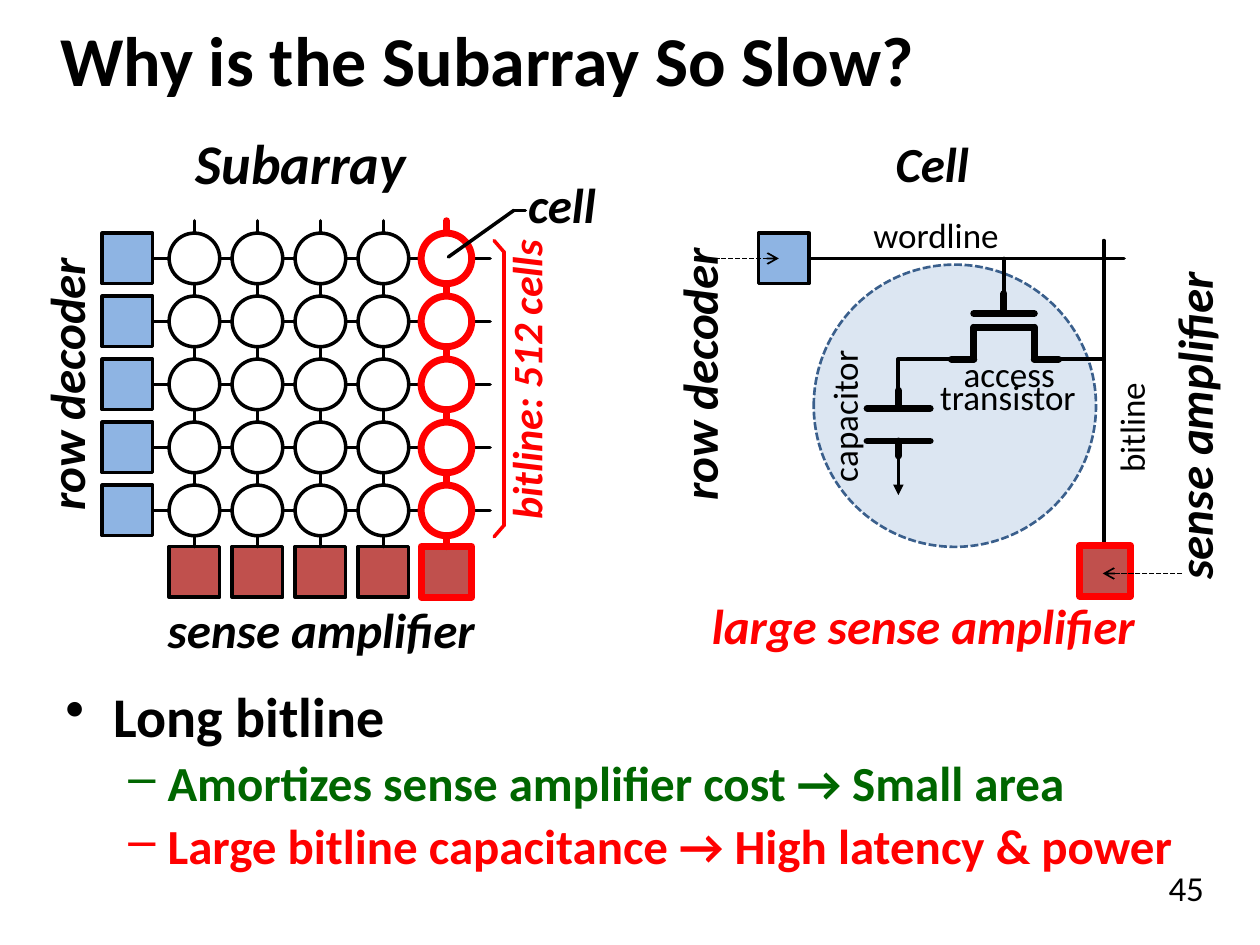
from lxml import etree
from pptx import Presentation
from pptx import util as u
from pptx.dml import color
from pptx.enum import dml, shapes, text
from pptx.oxml import ns

BLACK, WHITE, RED, GREEN = "000000", "FFFFFF", "FF0000", "006600"
BLUE, BRICK, PALE, NAVY = "8EB4E3", "C0504D", "DCE6F2", "3A5F8C"
RECT, OVAL = shapes.MSO_SHAPE.RECTANGLE, shapes.MSO_SHAPE.OVAL
SIDE, PITCH, COUNT = 1.02, 1.27, 5
FIRST_COLUMN, FIRST_ROW = 3.92, 5.21
THIN, THICK = 2, 4


def rgb(value):
    return color.RGBColor.from_string(value)


class Sketch:
    """Draws styled elements, measured in centimetres, on one slide."""

    font = "Calibri"

    def __init__(self, slide):
        self.slide = slide

    def style(self, paragraph, size, tint=BLACK, bold=False, italic=False):
        for run in paragraph.runs:
            font = run.font
            font.name, font.size = self.font, u.Pt(size)
            font.bold, font.italic = bold, italic
            font.color.rgb = rgb(tint)

    def stroke(self, line, tint, width, dashed=False):
        line.color.rgb = rgb(tint)
        line.width = u.Pt(width)
        if dashed:
            line.dash_style = dml.MSO_LINE.SQUARE_DOT

    def title(self, words):
        heading = self.slide.shapes.title
        heading.left, heading.top = u.Cm(0), u.Cm(0)
        heading.width, heading.height = u.Cm(25.4), u.Cm(2.34)
        frame = heading.text_frame
        frame.text = words
        frame.margin_left = u.Cm(1.22)
        frame.vertical_anchor = text.MSO_ANCHOR.MIDDLE
        frame.paragraphs[0].alignment = text.PP_ALIGN.LEFT
        self.style(frame.paragraphs[0], 40, bold=True)

    def frame(self, box, turned=False):
        holder = self.slide.shapes.add_textbox(*map(u.Cm, box))
        holder.rotation = 270 if turned else 0
        holder.text_frame.word_wrap = True
        return holder.text_frame

    def label(self, words, box, size=20, tint=BLACK, strong=False, turned=False,
              align=text.PP_ALIGN.CENTER, anchor=text.MSO_ANCHOR.MIDDLE):
        frame = self.frame(box, turned)
        frame.text = words
        frame.vertical_anchor = anchor
        frame.paragraphs[0].alignment = align
        self.style(frame.paragraphs[0], size, tint, strong, strong)

    def bullets(self, items, box):
        frame = self.frame(box)
        for index, (words, level, size, tint) in enumerate(items):
            paragraph = frame.add_paragraph() if index else frame.paragraphs[0]
            paragraph.text = words
            paragraph.level = level
            paragraph.line_spacing = 0.9
            paragraph.space_before = u.Pt(size * 0.2)
            mark, margin, hang = (("•", 0.97, 0.97), ("–", 2.06, 0.79))[level]
            properties = paragraph._p.get_or_add_pPr()
            properties.set("marL", str(u.Cm(margin)))
            properties.set("indent", str(-u.Cm(hang)))
            etree.SubElement(properties, ns.qn("a:buChar")).set("char", mark)
            self.style(paragraph, size, tint, bold=True)

    def block(self, kind, x, y, fill, tint=BLACK, width=THIN, side=SIDE, dashed=False):
        corner = (x - side / 2, y - side / 2, side, side)
        block = self.slide.shapes.add_shape(kind, *map(u.Cm, corner))
        block.shadow.inherit = False
        block.fill.solid()
        block.fill.fore_color.rgb = rgb(fill)
        self.stroke(block.line, tint, width, dashed)

    def wire(self, start, end, tint=BLACK, width=THIN, dashed=False, arrow=None, bend=None):
        kind = shapes.MSO_CONNECTOR.ELBOW if bend else shapes.MSO_CONNECTOR.STRAIGHT
        wire = self.slide.shapes.add_connector(kind, *map(u.Cm, start + end))
        self.stroke(wire.line, tint, width, dashed)
        properties = wire._element.spPr
        outline = properties.find(ns.qn("a:ln"))
        if not dashed:
            outline.set("cap", "rnd")
        if arrow:
            etree.SubElement(outline, ns.qn("a:tailEnd")).set("type", arrow)
        if bend:
            guide = etree.SubElement(properties.prstGeom.get_or_add_avLst(), ns.qn("a:gd"))
            guide.set("name", "adj1")
            guide.set("fmla", f"val {bend}")
        etree.SubElement(properties, ns.qn("a:effectLst"))

    def bitline(self, x, rows, tint, width):
        self.block(RECT, x, 11.53, BRICK, tint, width)
        self.wire((x, 11.02), (x, 4.45), tint, width)
        for y in rows:
            self.block(OVAL, x, y, WHITE, tint, width)


def draw_subarray(sketch):
    columns = [FIRST_COLUMN + PITCH * i for i in range(COUNT)]
    rows = [FIRST_ROW + PITCH * i for i in range(COUNT)]
    for y in rows:
        sketch.wire((9.88, y), (3.07, y))
        sketch.block(RECT, 2.57, y, BLUE)
    for x in columns[:-1]:
        sketch.bitline(x, rows, BLACK, THIN)
    sketch.bitline(columns[-1], rows, RED, THICK)
    bracket = [(9.96, 4.85), (10.16, 5.08), (10.16, 10.59), (9.96, 10.82)]
    leader = [(10.59, 4.24), (10.36, 4.24), (9.04, 5.18)]
    for points, tint in ((bracket, RED), (leader, BLACK)):
        for start, end in zip(points, points[1:]):
            sketch.wire(start, end, tint)
    sketch.label("Subarray", (1.47, 2.74, 9.19, 1.07), 32, strong=True)
    sketch.label("row decoder", (-1.73, 7.21, 6.1, 1.07), 28, strong=True, turned=True)
    sketch.label("sense amplifier", (2.59, 12.01, 7.77, 1.35), 28, strong=True)
    sketch.label("bitline: 512 cells", (7.04, 7.01, 7.11, 1.3), 24, RED, True, True)
    sketch.label("cell", (10.16, 3.61, 2.34, 0.99), 28, strong=True)


def draw_cell(sketch):
    wordline, bitline, gate, plate = FIRST_ROW, 22.25, 20.24, 18.11
    source, drain, foot = 19.63, 20.85, 7.24
    sketch.block(OVAL, 19.25, 8.18, PALE, NAVY, 1.5, 5.69, True)
    sketch.block(RECT, 15.8, wordline, BLUE)
    connections = [
        ((22.66, wordline), (16.31, wordline)),
        ((bitline, 11.23), (bitline, 4.85)),
        ((gate, wordline), (gate, 5.99)),
        ((bitline, foot), (21.34, foot)),
    ]
    transistor = [
        ((gate, 6.3), (gate, 5.92)),
        ((drain, 6.32), (source, 6.32)),
        ((drain, 6.6), (source, 6.6)),
        ((drain, foot), (drain, 6.6)),
        ((source, foot), (source, 6.6)),
        ((drain, foot), (21.34, foot)),
        ((19.18, foot), (source, foot)),
    ]
    capacitor = [
        ((plate, 8.23), (plate, 7.87)),
        ((18.75, 8.23), (17.48, 8.23)),
        ((18.75, 8.89), (17.48, 8.89)),
        ((plate, 9.19), (plate, 8.89)),
    ]
    for start, end in connections:
        sketch.wire(start, end)
    for start, end in transistor + capacitor:
        sketch.wire(start, end, width=THICK)
    sketch.wire((19.18, foot), (plate, 7.87), bend=100600)
    sketch.wire((plate, 9.19), (plate, 9.98), arrow="triangle")
    sketch.block(RECT, 22.28, 11.51, BRICK, RED, THICK)
    for start, end in (((23.83, 11.56), (22.23, 11.56)), ((14.4, wordline), (15.7, wordline))):
        sketch.wire(start, end, width=1, dashed=True, arrow="arrow")
    sketch.label("capacitor", (15.42, 7.9, 3.18, 0.99), turned=True)
    sketch.label("access", (18.54, 7.01, 3.61, 1.04))
    sketch.label("transistor", (18.54, 7.39, 3.56, 1.19))
    sketch.label("wordline", (16, 4.27, 5.74, 0.91))
    sketch.label("bitline", (20.42, 8.13, 4.75, 0.99), turned=True)
    sketch.label("Cell", (15.29, 2.74, 7.01, 1.07), 28, strong=True)
    sketch.label("large sense amplifier", (14.1, 11.86, 9.4, 1.47), 28, RED, True,
                 align=text.PP_ALIGN.LEFT)
    sketch.label("sense amplifier", (20.37, 8.05, 7.37, 1.07), 28, strong=True, turned=True)
    sketch.label("row decoder", (10.39, 7.01, 7.37, 1.07), 28, strong=True, turned=True)


def main():
    deck = Presentation()
    deck.slide_width, deck.slide_height = u.Cm(25.4), u.Cm(19.05)
    sketch = Sketch(deck.slides.add_slide(deck.slide_layouts.get_by_name("Title Only")))
    sketch.title("Why is the Subarray So Slow?")
    draw_subarray(sketch)
    draw_cell(sketch)
    sketch.bullets([
        ("Long bitline", 0, 32, BLACK),
        ("Amortizes sense amplifier cost → Small area", 1, 28, GREEN),
        ("Large bitline capacitance → High latency & power", 1, 28, RED),
    ], (1.07, 13.77, 23.06, 4.01))
    sketch.label("45", (22.43, 17.35, 2.97, 1.7), anchor=text.MSO_ANCHOR.TOP)
    deck.save("out.pptx")


if __name__ == "__main__":
    main()
